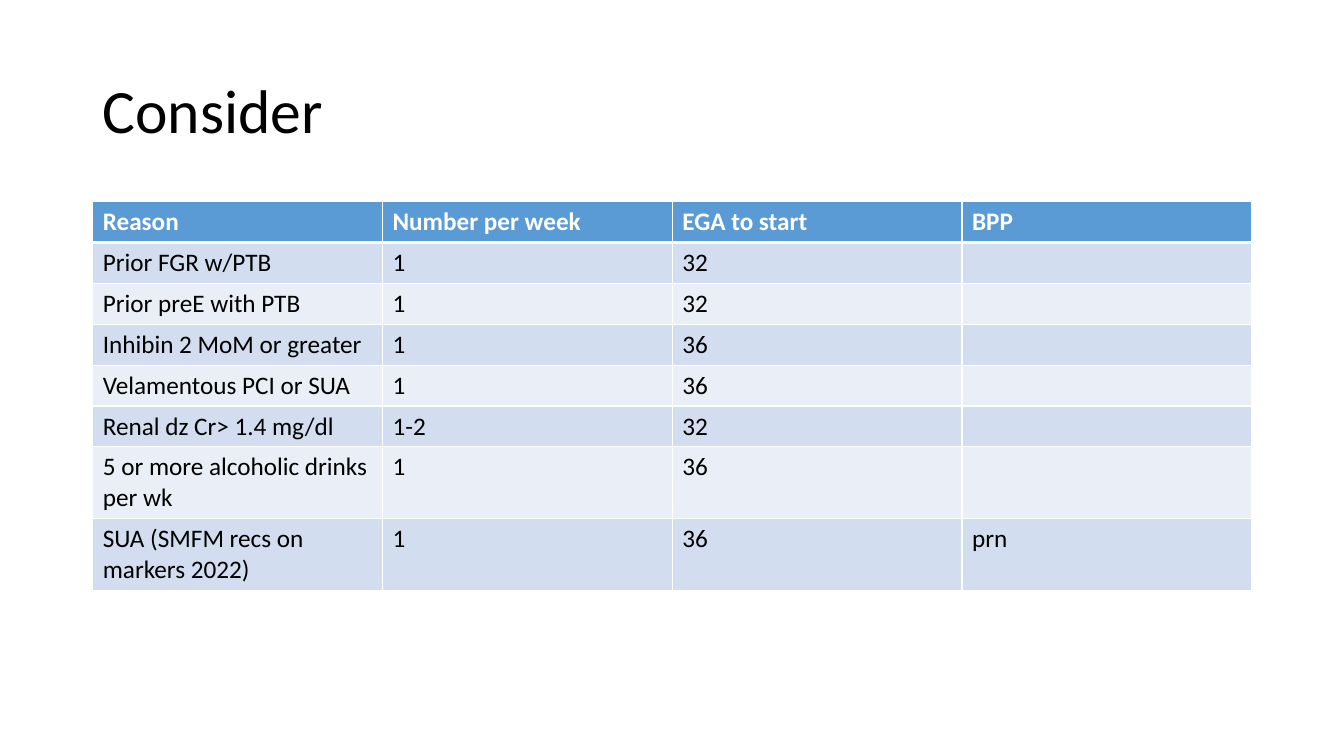
from dataclasses import dataclass

from lxml import etree
from pptx import Presentation
from pptx.dml.color import RGBColor
from pptx.enum.text import MSO_ANCHOR
from pptx.oxml.ns import qn
from pptx.util import Pt

MIDDLE = MSO_ANCHOR.MIDDLE


@dataclass(frozen=True)
class Theme:
    font: str = "Calibri"
    title_size: int = 44
    table_size: int = 18
    text: str = "000000"
    header_text: str = "FFFFFF"
    header_fill: str = "5B9BD5"
    bands: tuple = ("D2DEEF", "EAEFF7")
    border: str = "FFFFFF"
    thin: int = 1
    thick: int = 3


THEME = Theme()
LEFT, WIDTH = 66.24, 828
ROW_HEIGHT, TALL_ROW_HEIGHT = 29.2, 51.2
TALL_ROWS = 2

ROWS = [
    ("Reason", "Number per week", "EGA to start", "BPP"),
    ("Prior FGR w/PTB", "1", "32", ""),
    ("Prior preE with PTB", "1", "32", ""),
    ("Inhibin 2 MoM or greater", "1", "36", ""),
    ("Velamentous PCI or SUA", "1", "36", ""),
    ("Renal dz Cr> 1.4 mg/dl", "1-2", "32", ""),
    ("5 or more alcoholic drinks per wk", "1", "36", ""),
    ("SUA (SMFM recs on markers 2022)", "1", "36", "prn"),
]


def style_font(font, size, color, bold=False):
    font.name = THEME.font
    font.size = Pt(size)
    font.bold = bold
    font.color.rgb = RGBColor.from_string(color)


def add_title(s, text):
    sp = s.shapes.add_textbox(Pt(LEFT), Pt(28.75), Pt(WIDTH), Pt(104.4))
    tf = sp.text_frame
    tf.word_wrap = True
    tf.vertical_anchor = MIDDLE
    tf.text = text
    p = tf.paragraphs[0]
    p.line_spacing = 0.9
    style_font(p.runs[0].font, THEME.title_size, THEME.text)


def set_borders(cell, top, bottom):
    tcPr = cell._tc.get_or_add_tcPr()
    widths = {"L": THEME.thin, "R": THEME.thin, "T": top, "B": bottom}
    for side, width in widths.items():
        ln = etree.SubElement(tcPr, qn(f"a:ln{side}"), w=str(Pt(width)))
        fill = etree.SubElement(ln, qn("a:solidFill"))
        etree.SubElement(fill, qn("a:srgbClr"), val=THEME.border)


def fill_cell(cell, text, row):
    header = row == 0
    set_borders(
        cell,
        THEME.thick if row == 1 else THEME.thin,
        THEME.thick if header else THEME.thin,
    )
    cell.fill.solid()
    color = THEME.header_fill if header else THEME.bands[(row - 1) % 2]
    cell.fill.fore_color.rgb = RGBColor.from_string(color)
    cell.text_frame.text = text
    for r in cell.text_frame.paragraphs[0].runs:
        text_color = THEME.header_text if header else THEME.text
        style_font(r.font, THEME.table_size, text_color, header)


def add_table(s, rows):
    heights = [ROW_HEIGHT] * (len(rows) - TALL_ROWS) + [TALL_ROW_HEIGHT] * TALL_ROWS
    frame = s.shapes.add_table(
        len(rows), len(rows[0]), Pt(LEFT), Pt(144), Pt(WIDTH), Pt(sum(heights))
    )
    table = frame.table
    for i, values in enumerate(rows):
        table.rows[i].height = Pt(heights[i])
        for j, text in enumerate(values):
            fill_cell(table.cell(i, j), text, i)


def main():
    prs = Presentation()
    prs.slide_width, prs.slide_height = Pt(960), Pt(540)
    s = prs.slides.add_slide(prs.slide_layouts[6])
    add_title(s, "Consider")
    add_table(s, ROWS)
    prs.save("out.pptx")


if __name__ == "__main__":
    main()
